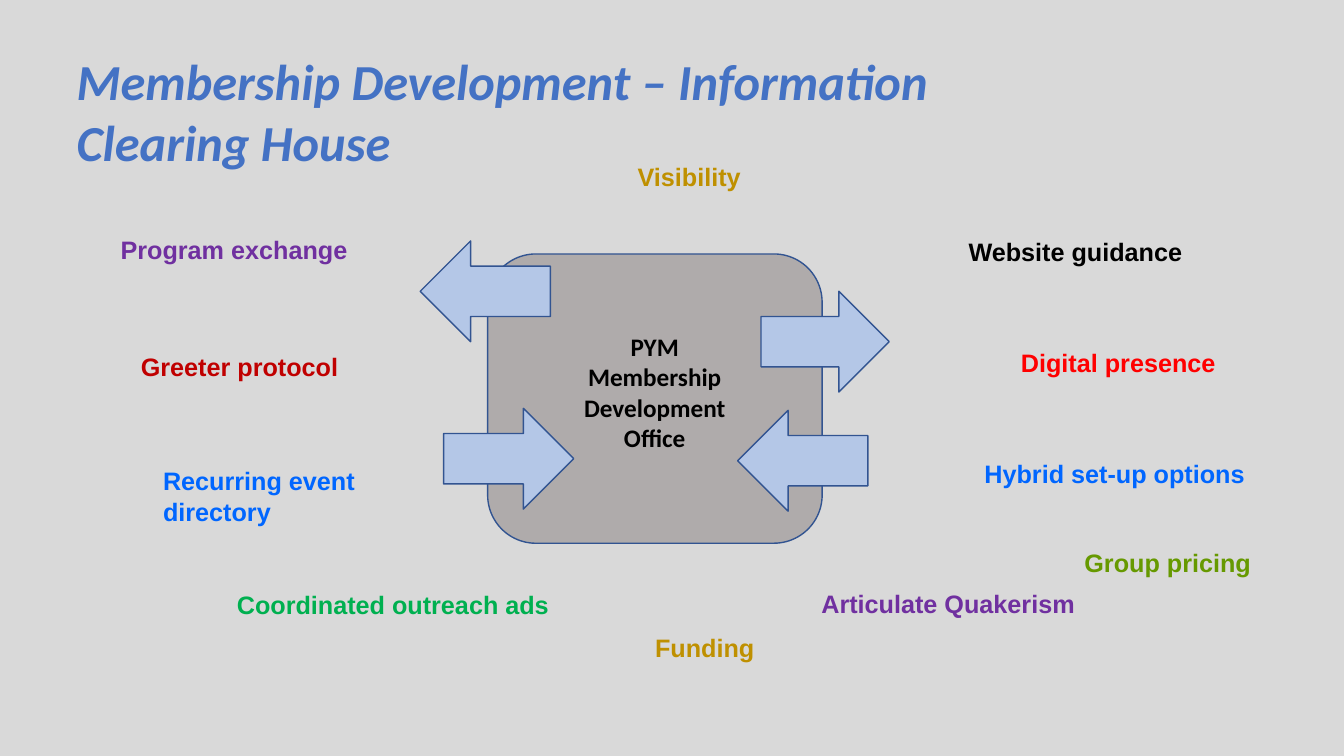
"""Build the membership development slide with its central office and surrounding services."""
import dataclasses

import pptx
import pptx.dml.color
import pptx.enum.shapes
import pptx.enum.text
import pptx.slide
import pptx.util

Cm = pptx.util.Cm
Shape = pptx.enum.shapes.MSO_SHAPE
Align = pptx.enum.text.PP_ALIGN


@dataclasses.dataclass(frozen=True)
class Theme:
    """Colours, fonts and type sizes of the slide."""
    background: str = "D9D9D9"
    title: str = "4472C4"
    office: str = "AFABAB"
    arrow: str = "B4C7E7"
    outline: str = "325491"
    black: str = "000000"
    red: str = "FF0000"
    dark_red: str = "C00000"
    blue: str = "0066FF"
    purple: str = "7030A0"
    olive: str = "669900"
    green: str = "00B050"
    gold: str = "BF9000"
    heading_font: str = "Calibri"
    label_font: str = "Arial"
    title_size: int = 36
    body_size: int = 18
    line_width: int = 1


THEME = Theme()


@dataclasses.dataclass(frozen=True)
class Caption:
    """A text box, measured in centimetres."""
    text: str
    left: float
    top: float
    width: float
    color: str
    height: float = 1.02
    font: str = THEME.label_font
    size: int = THEME.body_size
    italic: bool = False
    align: Align = Align.LEFT


@dataclasses.dataclass(frozen=True)
class Block:
    """An outlined preset shape, measured in centimetres."""
    left: float
    top: float
    width: float = 3.28
    height: float = 2.54
    kind: Shape = Shape.RIGHT_ARROW
    fill: str = THEME.arrow
    rotation: int = 0


BLOCKS = (
    Block(12.29, 6.4, 8.43, 7.29, Shape.ROUNDED_RECTANGLE, THEME.office),
    Block(19.18, 7.34, 3.23),
    Block(18.59, 10.34, rotation=180),
    Block(11.18, 10.29),
    Block(10.59, 6.07, rotation=180),
)

CAPTIONS = (
    Caption("Membership Development – Information Clearing House", 1.68, 1.14, 26.2,
            THEME.title, 3.33, THEME.heading_font, THEME.title_size, italic=True),
    Caption("PYM\nMembership Development Office", 14.2, 8.23, 4.6,
            THEME.black, 3.33, THEME.heading_font, align=Align.CENTER),
    Caption("Visibility", 15.82, 3.94, 3.28, THEME.gold),
    Caption("Website guidance", 24.16, 5.84, 6.65, THEME.black),
    Caption("Digital presence", 25.48, 8.64, 6.65, THEME.red),
    Caption("Hybrid set-up options", 24.56, 11.43, 7.47, THEME.blue),
    Caption("Group pricing", 27.08, 13.67, 6.5, THEME.olive),
    Caption("Articulate Quakerism", 20.45, 14.71, 7.47, THEME.purple),
    Caption("Funding", 16.26, 15.82, 3.28, THEME.gold),
    Caption("Coordinated outreach ads", 5.72, 14.73, 8.43, THEME.green),
    Caption("Recurring event directory", 3.86, 11.61, 5.74, THEME.blue, 1.8),
    Caption("Greeter protocol", 3.3, 8.74, 7.47, THEME.dark_red),
    Caption("Program exchange", 2.79, 5.79, 7.47, THEME.purple),
)


def rgb(color: str) -> pptx.dml.color.RGBColor:
    """Turn a hexadecimal colour into an RGB value."""
    return pptx.dml.color.RGBColor.from_string(color)


def draw_block(page: pptx.slide.Slide, block: Block) -> None:
    """Draw one outlined shape."""
    shape = page.shapes.add_shape(block.kind, Cm(block.left), Cm(block.top),
                                  Cm(block.width), Cm(block.height))
    shape.shadow.inherit = False
    shape.rotation = block.rotation
    shape.fill.solid()
    shape.fill.fore_color.rgb = rgb(block.fill)
    shape.line.color.rgb = rgb(THEME.outline)
    shape.line.width = pptx.util.Pt(THEME.line_width)


def draw_caption(page: pptx.slide.Slide, caption: Caption) -> None:
    """Draw one bold caption."""
    box = page.shapes.add_textbox(Cm(caption.left), Cm(caption.top),
                                  Cm(caption.width), Cm(caption.height))
    frame = box.text_frame
    frame.word_wrap = True
    frame.auto_size = pptx.enum.text.MSO_AUTO_SIZE.SHAPE_TO_FIT_TEXT
    frame.text = caption.text
    for para in frame.paragraphs:
        para.alignment = caption.align
        for span in para.runs:
            span.font.name = caption.font
            span.font.size = pptx.util.Pt(caption.size)
            span.font.bold = True
            span.font.italic = caption.italic
            span.font.color.rgb = rgb(caption.color)


def main() -> None:
    """Assemble and save the deck."""
    deck = pptx.Presentation()
    deck.slide_width, deck.slide_height = Cm(33.87), Cm(19.05)
    page = deck.slides.add_slide(deck.slide_layouts[6])
    page.background.fill.solid()
    page.background.fill.fore_color.rgb = rgb(THEME.background)
    for block in BLOCKS:
        draw_block(page, block)
    for caption in CAPTIONS:
        draw_caption(page, caption)
    deck.save("out.pptx")


if __name__ == "__main__":
    main()
